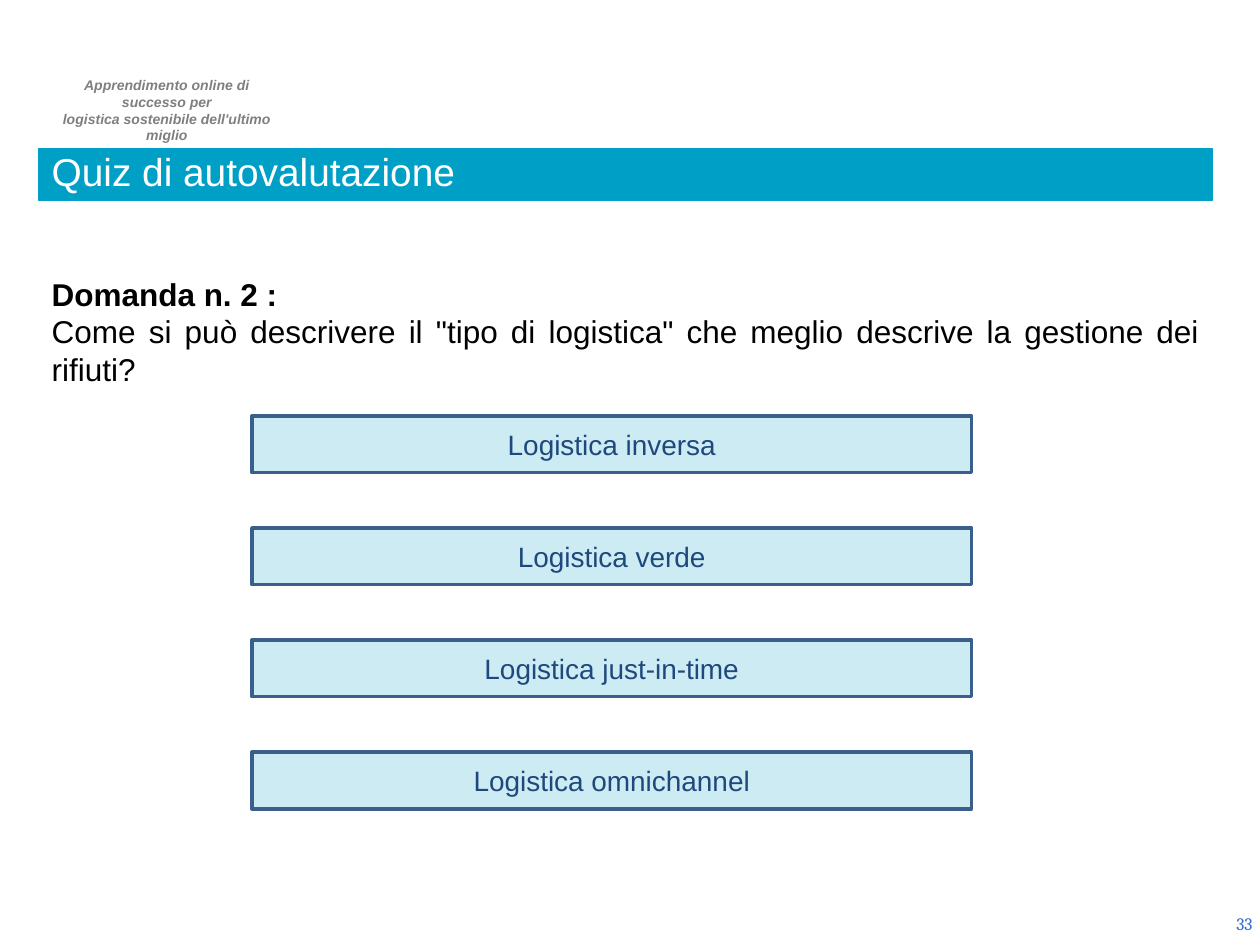
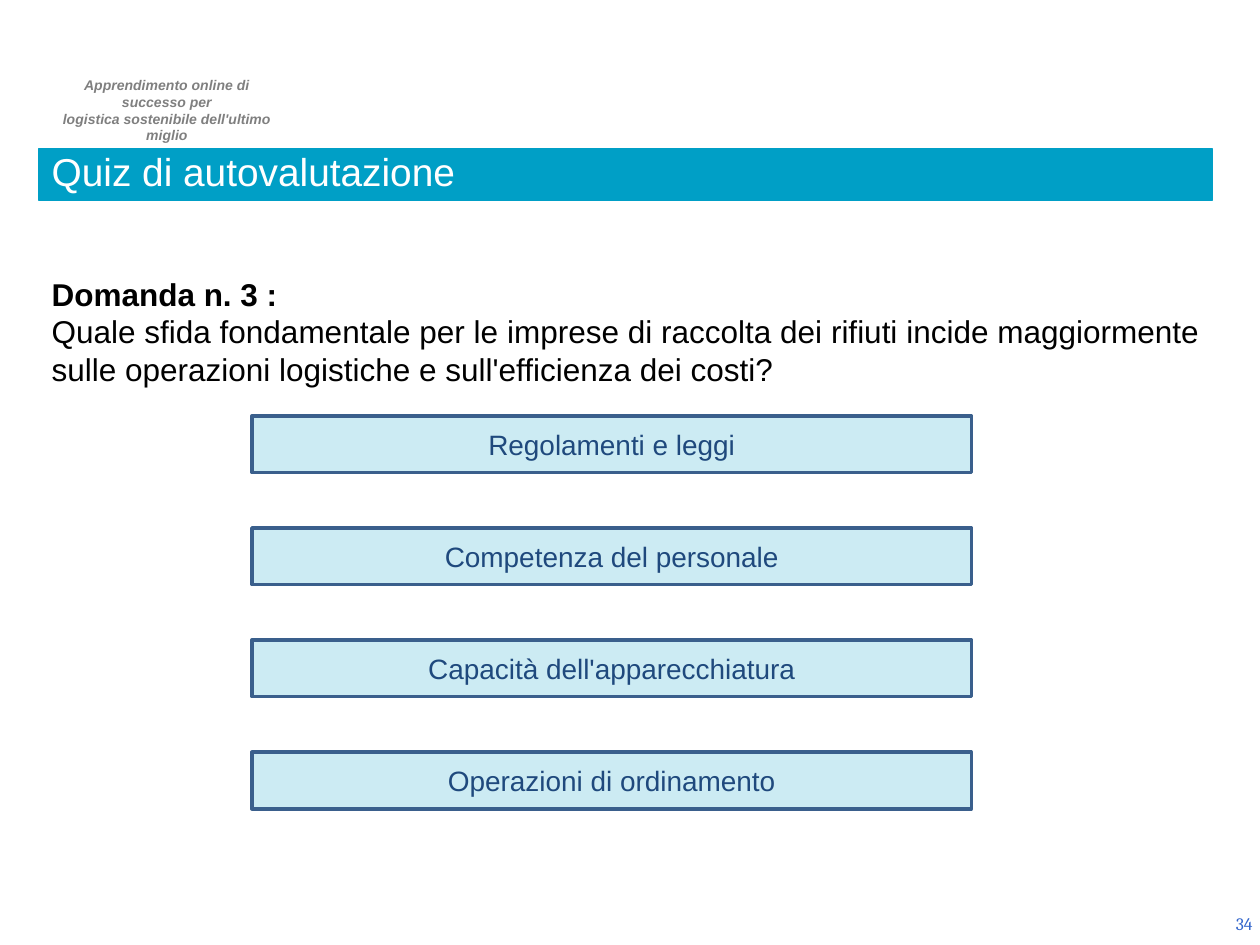
from lxml.etree import SubElement
from pptx import Presentation
from pptx.dml.color import RGBColor
from pptx.enum.shapes import MSO_SHAPE
from pptx.enum.text import MSO_ANCHOR, MSO_AUTO_SIZE, PP_ALIGN
from pptx.oxml.ns import qn
from pptx.util import Inches, Pt

TEAL = RGBColor(0x00, 0x9F, 0xC6)
NAVY = RGBColor(0x1F, 0x49, 0x7D)
BORDER_BLUE = RGBColor(0x3A, 0x5F, 0x8C)
NUMBER_BLUE = RGBColor(0x33, 0x66, 0xCC)
GREY = RGBColor(0x7F, 0x7F, 0x7F)
WHITE = RGBColor(0xFF, 0xFF, 0xFF)
BLACK = RGBColor(0x00, 0x00, 0x00)

TITLE = "Quiz di autovalutazione"
TAGLINE = "Apprendimento online di successo per\nlogistica sostenibile dell'ultimo miglio"
FIRST_NUMBER = 33
QUESTIONS = [
    (
        "Domanda n. 2 :",
        'Come si può descrivere il "tipo di logistica" che meglio descrive la gestione dei rifiuti?',
        ["Logistica inversa", "Logistica verde", "Logistica just-in-time", "Logistica omnichannel"],
    ),
    (
        "Domanda n. 3 :",
        "Quale sfida fondamentale per le imprese di raccolta dei rifiuti incide maggiormente "
        "sulle operazioni logistiche e sull'efficienza dei costi?",
        ["Regolamenti e leggi", "Competenza del personale",
         "Capacità dell'apparecchiatura", "Operazioni di ordinamento"],
    ),
]

presentation = Presentation()
presentation.slide_width = Inches(10)
presentation.slide_height = Inches(7.5)
COLUMN = presentation.slide_width / 100
ROW = presentation.slide_height / 75
MARGIN, CONTENT_WIDTH = 3.1, 93.1
OPTION_TOP, OPTION_STEP = 33, 8.9


def place(shape, left, top, width, height):
    shape.left, shape.width = int(left * COLUMN), int(width * COLUMN)
    shape.top, shape.height = int(top * ROW), int(height * ROW)


def write(shape, text, size, color, alignment, anchor, font_name="Arial"):
    frame = shape.text_frame
    frame.text = text
    frame.word_wrap = True
    frame.auto_size = MSO_AUTO_SIZE.NONE
    frame.vertical_anchor = anchor
    for paragraph in frame.paragraphs:
        paragraph.alignment = alignment
        paragraph.space_before = Pt(0)
        for run in paragraph.runs:
            run.font.name = font_name
            run.font.size = Pt(size)
            run.font.color.rgb = color
    return frame.paragraphs


layout = presentation.slide_layouts.get_by_name("Title and Content")

for index, (heading, question, options) in enumerate(QUESTIONS):
    slide = presentation.slides.add_slide(layout)

    if index == 0:
        tagline = slide.shapes.add_textbox(0, 0, 0, 0)
        place(tagline, 2.9, 5.6, 20.3, 3.7)
        for paragraph in write(tagline, TAGLINE, 8, GREY, PP_ALIGN.CENTER, MSO_ANCHOR.TOP):
            paragraph.runs[0].font.bold = True
            paragraph.runs[0].font.italic = True
        for properties in tagline.element.iter(qn("a:pPr")):
            properties.set("marL", str(Inches(0.04)))
        layout.shapes.element.append(tagline.element)

    title = slide.shapes.title
    place(title, MARGIN, 11.8, CONTENT_WIDTH, 4.1)
    title.fill.solid()
    title.fill.fore_color.rgb = TEAL
    title.line.color.rgb = TEAL
    title.line.width = Pt(0.75)
    write(title, TITLE, 22.2, WHITE, PP_ALIGN.LEFT, MSO_ANCHOR.BOTTOM)[0].line_spacing = 0.8

    body = slide.placeholders[1]
    place(body, MARGIN, 21.3, CONTENT_WIDTH, 10.1)
    paragraphs = write(body, f"{heading}\n{question}", 18, BLACK, PP_ALIGN.JUSTIFY, MSO_ANCHOR.TOP)
    paragraphs[0].alignment = PP_ALIGN.LEFT
    paragraphs[0].runs[0].font.bold = True
    for properties in body.element.iter(qn("a:pPr")):
        properties.set("marL", "0")
        properties.set("indent", "0")
        SubElement(properties, qn("a:buNone"))

    for position, answer in enumerate(options):
        option = slide.shapes.add_shape(MSO_SHAPE.RECTANGLE, 0, 0, 0, 0)
        place(option, 20, OPTION_TOP + position * OPTION_STEP, 57.1, 4.5)
        option.shadow.inherit = False
        option.fill.solid()
        option.fill.fore_color.rgb = TEAL
        fill_color = option.element.spPr.find(f"{qn('a:solidFill')}/{qn('a:srgbClr')}")
        SubElement(fill_color, qn("a:alpha"), val="20000")
        option.line.color.rgb = BORDER_BLUE
        option.line.width = Pt(2)
        write(option, answer, 16, NAVY, PP_ALIGN.CENTER, MSO_ANCHOR.MIDDLE)

    number = slide.shapes.add_textbox(0, 0, 0, 0)
    place(number, 77.1, 71.3, 23.3, 4)
    write(number, str(FIRST_NUMBER + index), 10, NUMBER_BLUE, PP_ALIGN.RIGHT, MSO_ANCHOR.MIDDLE, "Cambria")

presentation.save("out.pptx")
